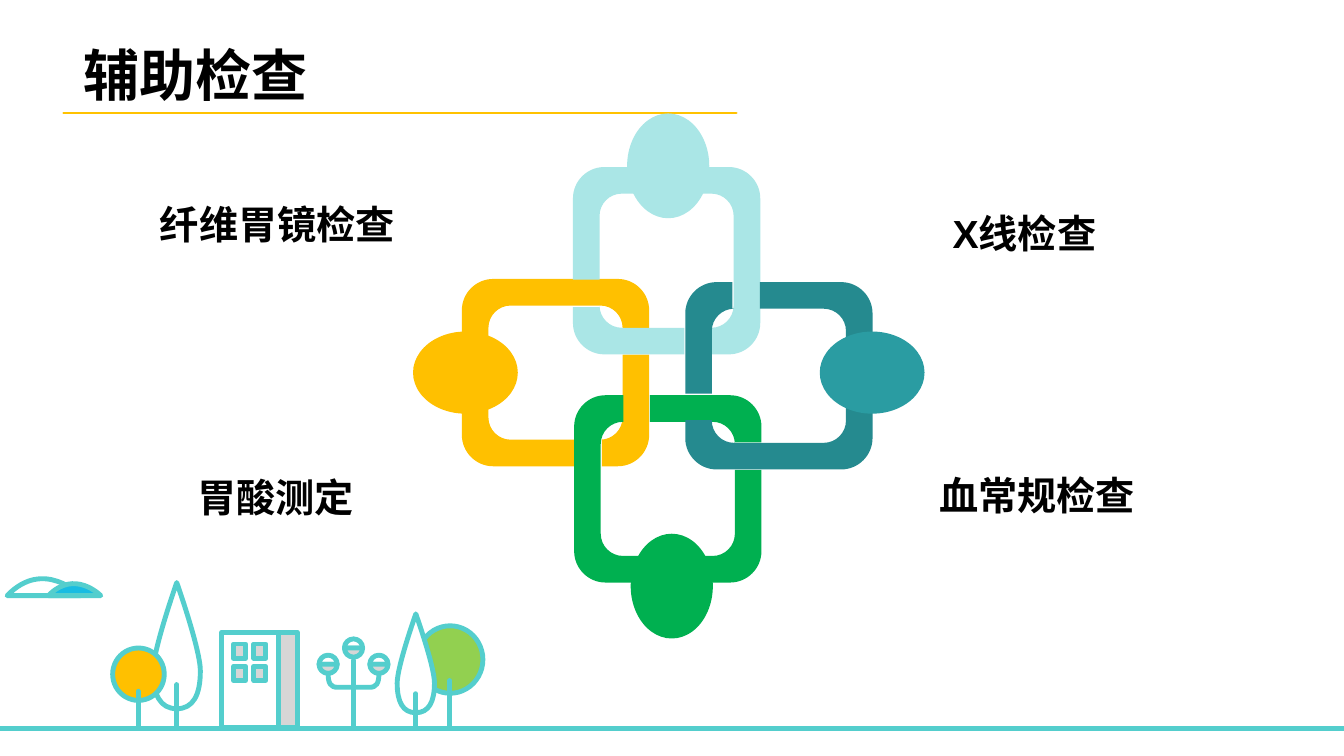
from lxml import etree
from pptx import Presentation
from pptx import util as u
from pptx.dml.color import RGBColor
from pptx.enum import shapes, text
from pptx.oxml.ns import qn

COLORS = {
    "outline": "54CECD", "white": "FFFFFF", "grey": "D6D6D6", "black": "000000",
    "leaf": "92D050", "amber": "FFC000", "rule": "FFC200", "sky": "18BCE2",
    "mint": "AAE6E6", "green": "00B050", "teal": "258A8F", "teal_knob": "2A9CA2",
}
CJK_FONT = "Noto Sans CJK SC"
STROKE = 3.5
GROUND = 18.35
TRUNK_FOOT = 18.31
SIDE, BAND, OUTER, INNER = 4.72, 0.67, 0.79, 0.56
ROUNDNESS = 0.55


def rgb(name):
    return RGBColor.from_string(COLORS[name])


def set_line(shape, color, width=STROKE):
    shape.line.color.rgb = rgb(color)
    shape.line.width = u.Pt(width)
    outline = shape._element.spPr.find(qn("a:ln"))
    outline.set("cap", "rnd")
    etree.SubElement(outline, qn("a:round"))


def paint(shape, fill, line):
    shape.shadow.inherit = False
    if fill:
        shape.fill.solid()
        shape.fill.fore_color.rgb = rgb(fill)
    else:
        shape.fill.background()
    if line:
        set_line(shape, line)
    else:
        shape.line.fill.background()


def add_preset(page, kind, left, top, width, height, fill, line="outline"):
    shape = page.shapes.add_shape(kind, u.Cm(left), u.Cm(top), u.Cm(width), u.Cm(height))
    paint(shape, fill, line)


def add_rule(page, x1, y1, x2, y2, color="outline", width=STROKE):
    rule = page.shapes.add_connector(
        shapes.MSO_CONNECTOR.STRAIGHT, u.Cm(x1), u.Cm(y1), u.Cm(x2), u.Cm(y2))
    set_line(rule, color, width)
    etree.SubElement(rule._element.spPr, qn("a:effectLst"))


def bend_segments(shape, contours):
    steps = shape._element.iter(qn("a:moveTo"), qn("a:lnTo"))
    for segment in [list(segment) for contour in contours for segment in contour]:
        nodes = [next(steps) for _ in segment]
        if len(nodes) == 3:
            yield nodes


def add_outline(page, contours, fill, line="outline", close=True):
    builder = None
    for contour in contours:
        start, *rest = [(u.Cm(x), u.Cm(y)) for segment in contour for x, y in segment]
        if builder is None:
            builder = page.shapes.build_freeform(*start, scale=1.0)
        else:
            builder.move_to(*start)
        builder.add_line_segments(rest, close=close)
    shape = builder.convert_to_shape()
    for nodes in list(bend_segments(shape, contours)):
        curve = etree.Element(qn("a:cubicBezTo"))
        nodes[0].addprevious(curve)
        for node in nodes:
            curve.append(node[0])
            node.getparent().remove(node)
    paint(shape, fill, line)


def line_to(*points):
    return [(point,) for point in points]


def rounded(start, corner, end):
    def toward(point):
        return tuple(p + (c - p) * ROUNDNESS for p, c in zip(point, corner))
    return [(start,), (toward(start), toward(end), end)]


def place(contour, convert):
    return [tuple(convert(x, y) for x, y in segment) for segment in contour]


def add_link(page, left, top, turns, fill):
    far, near, inside = SIDE - OUTER, BAND + INNER, SIDE - BAND
    inner_far = inside - INNER
    long_piece = [
        *line_to((SIDE, 1.24)),
        *rounded((SIDE, OUTER), (SIDE, 0), (far, 0)),
        *rounded((OUTER, 0), (0, 0), (0, OUTER)),
        *rounded((0, far), (0, SIDE), (OUTER, SIDE)),
        *line_to((2.84, SIDE), (2.84, inside)),
        *rounded((near, inside), (BAND, inside), (BAND, inner_far)),
        *rounded((BAND, near), (BAND, BAND), (near, BAND)),
        *rounded((inner_far, BAND), (inside, BAND), (inside, near)),
        *line_to((inside, 1.24))]
    corner_piece = [
        *line_to((SIDE, 1.91)),
        *rounded((SIDE, far), (SIDE, SIDE), (far, SIDE)),
        *line_to((3.53, SIDE), (3.53, inside)),
        *rounded((inner_far, inside), (inside, inside), (inside, inner_far)),
        *line_to((inside, 1.91))]
    contours = [long_piece, corner_piece]
    for _ in range(turns):
        contours = [place(contour, lambda x, y: (SIDE - y, x)) for contour in contours]
    contours = [place(contour, lambda x, y: (left + x, top + y)) for contour in contours]
    add_outline(page, contours, fill, None)


def add_knob(page, cx, cy, width, height, fill):
    add_preset(page, shapes.MSO_SHAPE.OVAL, cx - width / 2, cy - height / 2,
               width, height, fill, None)


def add_round_tree(page, left, top, width, height, trunk_x, trunk_top, fill):
    add_preset(page, shapes.MSO_SHAPE.OVAL, left, top, width, height, fill)
    add_rule(page, trunk_x, TRUNK_FOOT, trunk_x, trunk_top)


def add_pointed_tree(page, left, top, width, height, trunk_top):
    crown = [((0.5, 0),),
             ((0.5, 0), (0, 0.53), (0, 0.7)), ((0, 0.89), (0.15, 1), (0.5, 1)),
             ((0.85, 1), (1, 0.89), (1, 0.7)), ((1, 0.53), (0.5, 0), (0.5, 0))]
    add_outline(page, [place(crown, lambda x, y: (left + x * width, top + y * height))],
                "white")
    add_rule(page, left + width / 2, TRUNK_FOOT, left + width / 2, trunk_top)


def add_lamp(page, cx):
    radius = 0.23
    add_rule(page, cx, TRUNK_FOOT, cx, 16.64)
    for x, y in ((cx - 0.64, 16.74), (cx + 0.64, 16.74), (cx, 16.33)):
        for tip, fill in ((y - radius, "white"), (y + radius, "grey")):
            left_half = rounded((x - radius, y), (x - radius, tip), (x, tip))
            right_half = rounded((x, tip), (x + radius, tip), (x + radius, y))
            add_outline(page, [left_half + right_half[1:]], fill)
    for sign in (-1, 1):
        bend, tip = cx + sign * 0.4, cx + sign * 0.64
        arm = line_to((cx, 17.32), (bend, 17.32))
        arm.append(((cx + sign * 0.58, 17.32), (tip, 17.22), (tip, 16.97)))
        add_outline(page, [arm], None, close=False)


def add_cloud(page, left, right, peak, fill):
    base = 15.01
    arch = ((right, base), ((left + right) / 2, peak), (left, base))
    add_outline(page, [[((left, base),), ((right, base),), arch]], fill)


def add_building(page):
    rectangle = shapes.MSO_SHAPE.RECTANGLE
    add_preset(page, rectangle, 5.59, 15.93, 1.42, 2.41, "white")
    add_preset(page, rectangle, 7.01, 15.93, 0.48, 2.41, "grey")
    for top in (16.23, 16.79):
        for left in (5.89, 6.4):
            add_preset(page, rectangle, left, top, 0.3, 0.36, "grey")


def write(box, words, size, font, anchor, align):
    frame = box.text_frame
    frame.word_wrap = True
    frame.vertical_anchor = anchor
    frame.text = words
    para = frame.paragraphs[0]
    para.alignment = align
    para.font.size = u.Pt(size)
    para.font.bold = True
    para.font.color.rgb = rgb("black")
    para.font.name = font
    defaults = para._p.get_or_add_pPr().find(qn("a:defRPr"))
    etree.SubElement(defaults, qn("a:ea")).set("typeface", CJK_FONT)


def add_title(page, words):
    title = page.shapes.title
    title.left, title.top, title.width, title.height = map(u.Cm, (1.85, 0.89, 10.46, 1.96))
    write(title, words, 40, CJK_FONT, text.MSO_ANCHOR.TOP, text.PP_ALIGN.LEFT)
    title.text_frame.auto_size = text.MSO_AUTO_SIZE.NONE
    add_rule(page, 1.6, 2.84, 18.56, 2.84, "rule", 1.5)


def add_label(page, left, top, words, anchor, align):
    box = page.shapes.add_textbox(u.Cm(left), u.Cm(top), u.Cm(11.23), u.Cm(2.39))
    write(box, words, 28, "Arial", anchor, align)


def add_scenery(page):
    add_rule(page, 0, GROUND, 33.87, GROUND)
    add_round_tree(page, 10.52, 15.77, 1.65, 1.7, 11.33, 17.15, "leaf")
    add_pointed_tree(page, 3.86, 14.68, 1.19, 3.18, 17.25)
    add_lamp(page, 8.91)
    add_round_tree(page, 2.84, 16.33, 1.3, 1.32, 3.48, 17.42, "amber")
    add_pointed_tree(page, 10.01, 15.47, 0.94, 2.49, 17.48)
    add_cloud(page, 0.18, 2.03, 14.05, "white")
    add_cloud(page, 1.22, 2.54, 14.33, "sky")
    add_building(page)


def main():
    deck = Presentation()
    deck.slide_width, deck.slide_height = u.Cm(33.87), u.Cm(19.05)
    page = deck.slides.add_slide(deck.slide_layouts[5])
    add_scenery(page)
    add_title(page, "辅助检查")
    for link, knob, knob_fill in (
            ((11.64, 7.03, 0, "amber"), (11.73, 9.39, 2.64, 2.07), "amber"),
            ((14.44, 4.21, 1, "mint"), (16.84, 4.18, 2.07, 2.64), "mint"),
            ((14.47, 9.96, 3, "green"), (16.93, 14.77, 2.07, 2.64), "green"),
            ((17.27, 7.11, 2, "teal"), (21.98, 9.39, 2.64, 2.07), "teal_knob")):
        add_link(page, *link)
        add_knob(page, *knob, knob_fill)
    for left, top, words in ((-1.03, 4.93, "纤维胃镜检查"), (-2.06, 11.81, "胃酸测定")):
        add_label(page, left, top, words, text.MSO_ANCHOR.TOP, text.PP_ALIGN.RIGHT)
    for left, top, words in ((23.76, 4.67, "X线检查"), (23.42, 11.28, "血常规检查")):
        add_label(page, left, top, words, text.MSO_ANCHOR.MIDDLE, text.PP_ALIGN.LEFT)
    deck.save("out.pptx")


if __name__ == "__main__":
    main()
